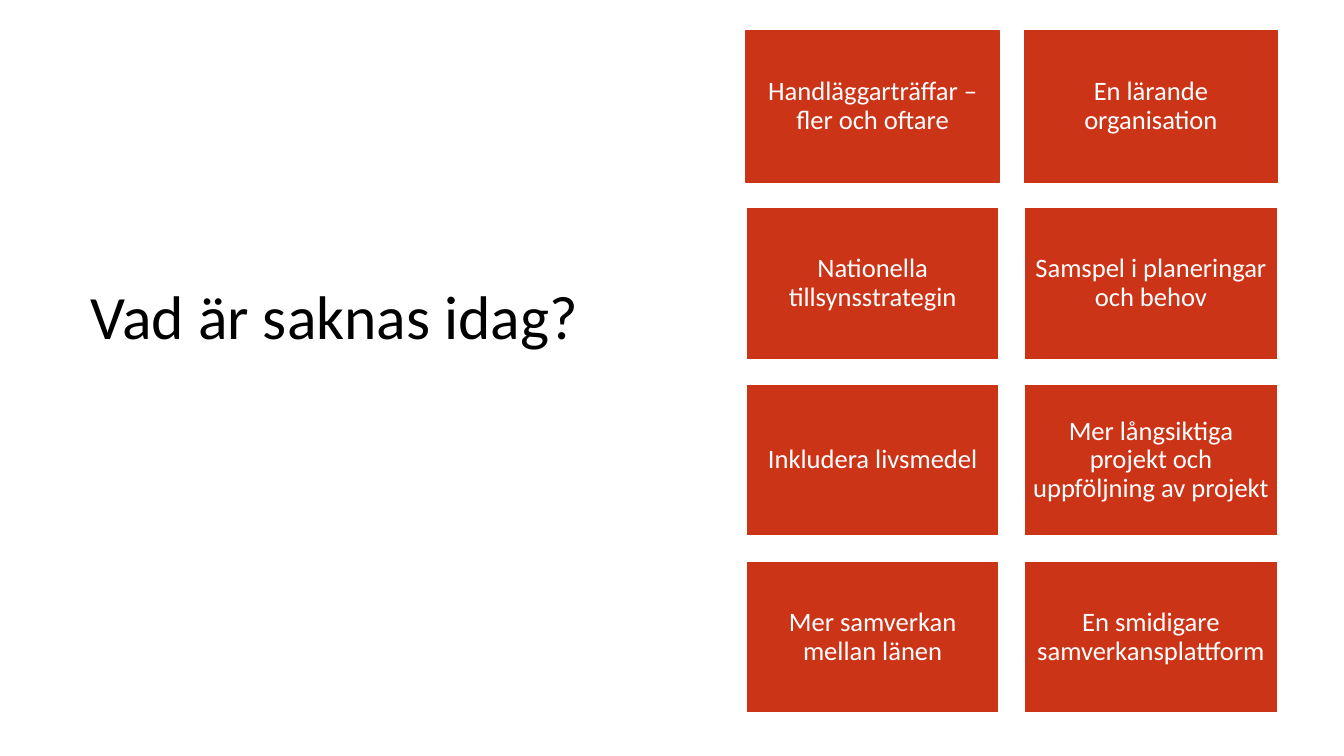
"""Build a slide with a question beside a two-column grid of answers."""
from pptx import Presentation
from pptx.dml.color import RGBColor
from pptx.enum.shapes import MSO_SHAPE
from pptx.enum.text import MSO_ANCHOR, PP_ALIGN
from pptx.util import Inches, Pt

RECTANGLE = MSO_SHAPE.RECTANGLE
TOP, MIDDLE = MSO_ANCHOR.TOP, MSO_ANCHOR.MIDDLE
LEFT, CENTER = PP_ALIGN.LEFT, PP_ALIGN.CENTER

TITLE = "Vad är saknas idag?"
ANSWERS = [
    ("Handläggarträffar – fler och oftare", "En lärande organisation"),
    ("Nationella tillsynsstrategin", "Samspel i planeringar och behov"),
    ("Inkludera livsmedel", "Mer långsiktiga projekt och uppföljning av projekt"),
    ("Mer samverkan mellan länen", "En smidigare samverkansplattform"),
]
COLORS = {"box": "CC3417", "white": "FFFFFF", "title": "000000"}
FONT = "Calibri"
GRID_LEFT, GRID_TOP = 7.4, 0.3
BOX_WIDTH, BOX_HEIGHT = 2.51, 1.51
COLUMN_STEP, ROW_STEP = 2.76, 1.755
INSET = 0.08


def color(name):
    return RGBColor.from_string(COLORS[name])


def write(shape, text, size, color_name, align, anchor):
    frame = shape.text_frame
    frame.text = text
    frame.word_wrap = True
    frame.vertical_anchor = anchor
    para = frame.paragraphs[0]
    para.alignment = align
    para.line_spacing = 0.9
    para.font.name = FONT
    para.font.size = Pt(size)
    para.font.color.rgb = color(color_name)
    return frame


def add_answer(page, text, row, column):
    box = page.shapes.add_shape(
        RECTANGLE,
        Inches(GRID_LEFT + column * COLUMN_STEP),
        Inches(GRID_TOP + row * ROW_STEP),
        Inches(BOX_WIDTH),
        Inches(BOX_HEIGHT),
    )
    box.shadow.inherit = False
    box.fill.solid()
    box.fill.fore_color.rgb = color("box")
    box.line.color.rgb = color("box" if row == 0 else "white")
    box.line.width = Pt(1)
    frame = write(box, text, 19, "white", CENTER, MIDDLE)
    frame.margin_left = frame.margin_right = Inches(INSET)
    frame.margin_top = frame.margin_bottom = Inches(INSET)


def main():
    deck = Presentation()
    deck.slide_width, deck.slide_height = Inches(13.33), Inches(7.5)
    page = deck.slides.add_slide(deck.slide_layouts[5])

    title = page.shapes.title
    title.left, title.top = Inches(0.8), Inches(2.79)
    title.width, title.height = Inches(5.94), Inches(1.45)
    write(title, TITLE, 44, "title", LEFT, TOP)

    for row, answers in enumerate(ANSWERS):
        for column, text in enumerate(answers):
            add_answer(page, text, row, column)

    deck.save("out.pptx")


if __name__ == "__main__":
    main()
